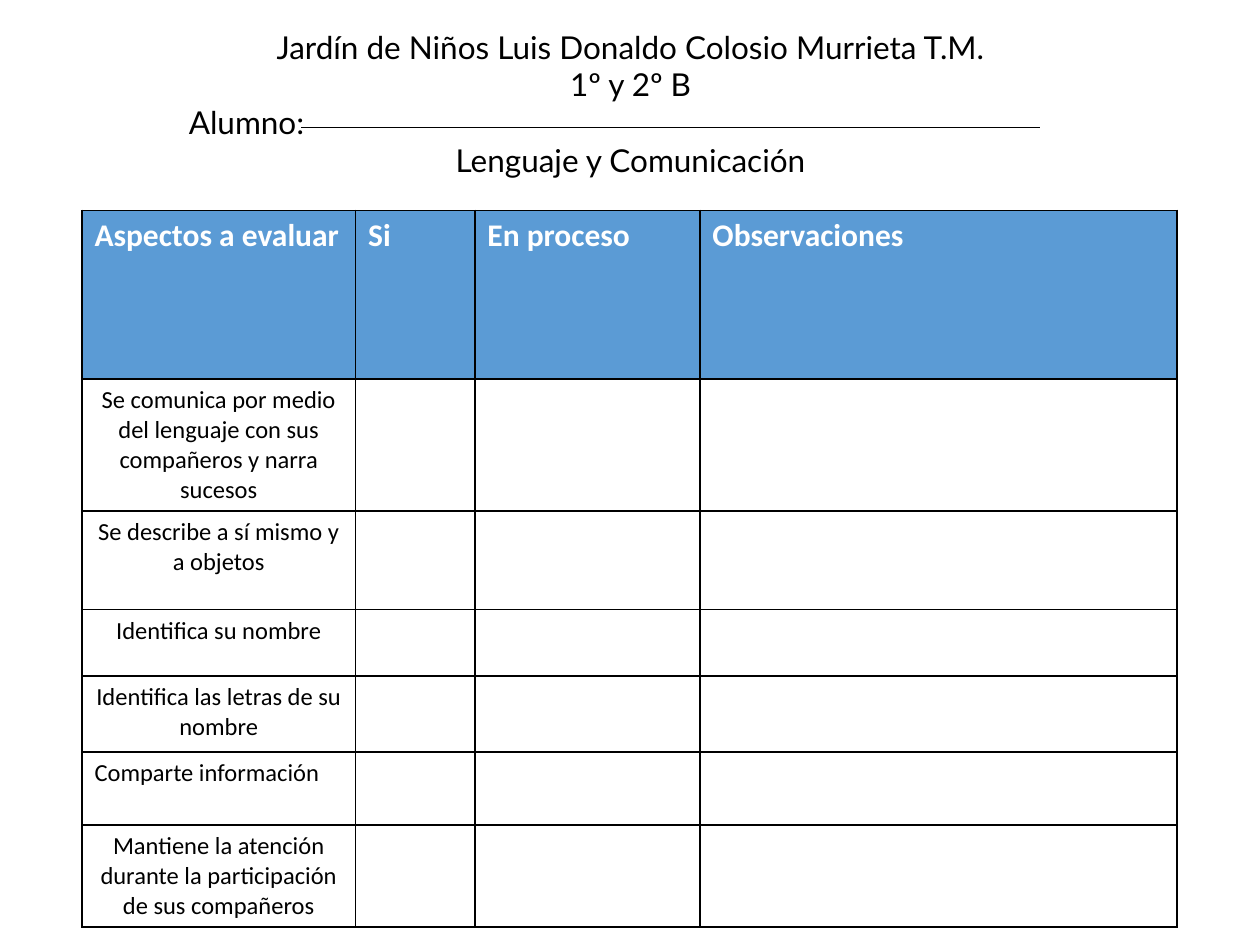
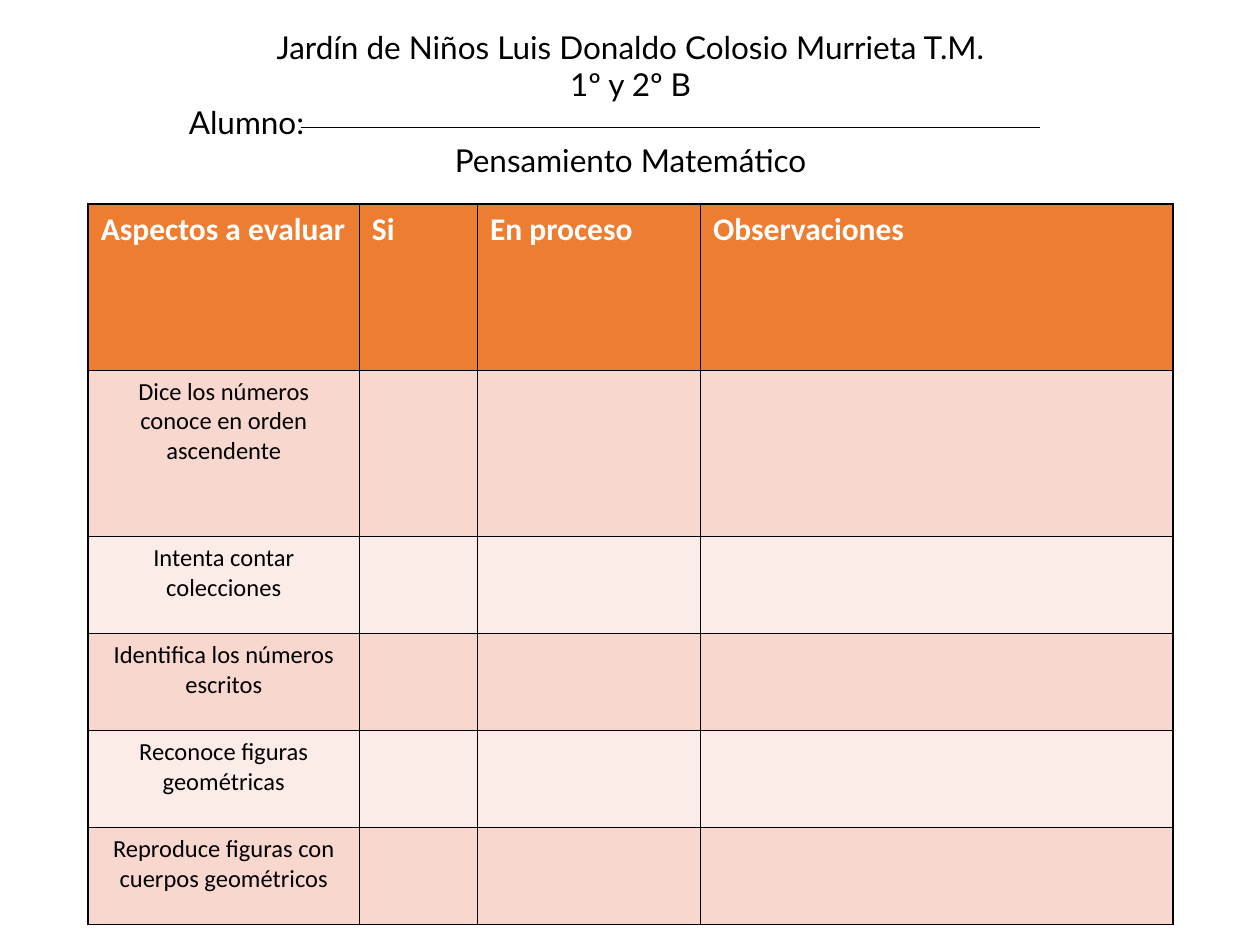
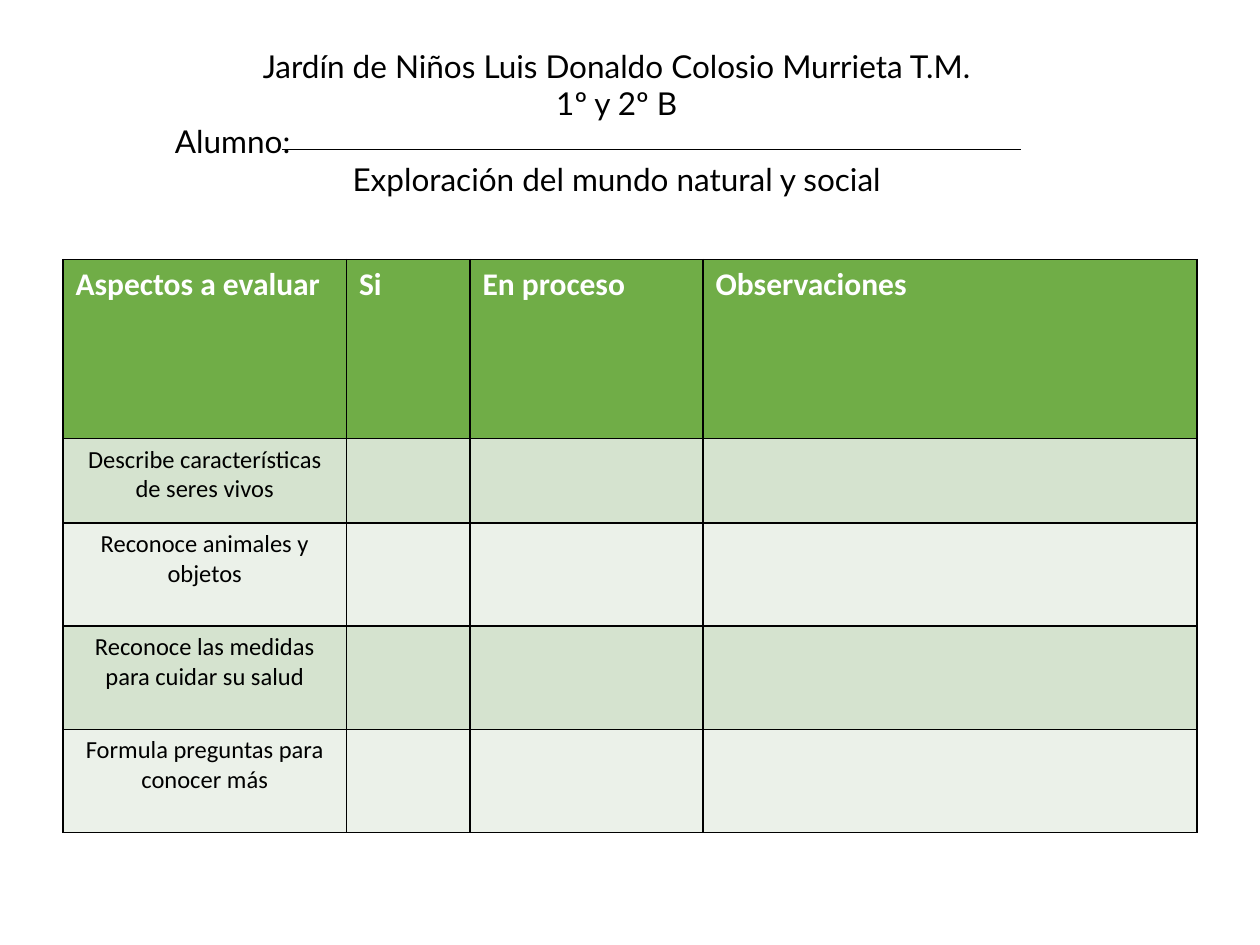
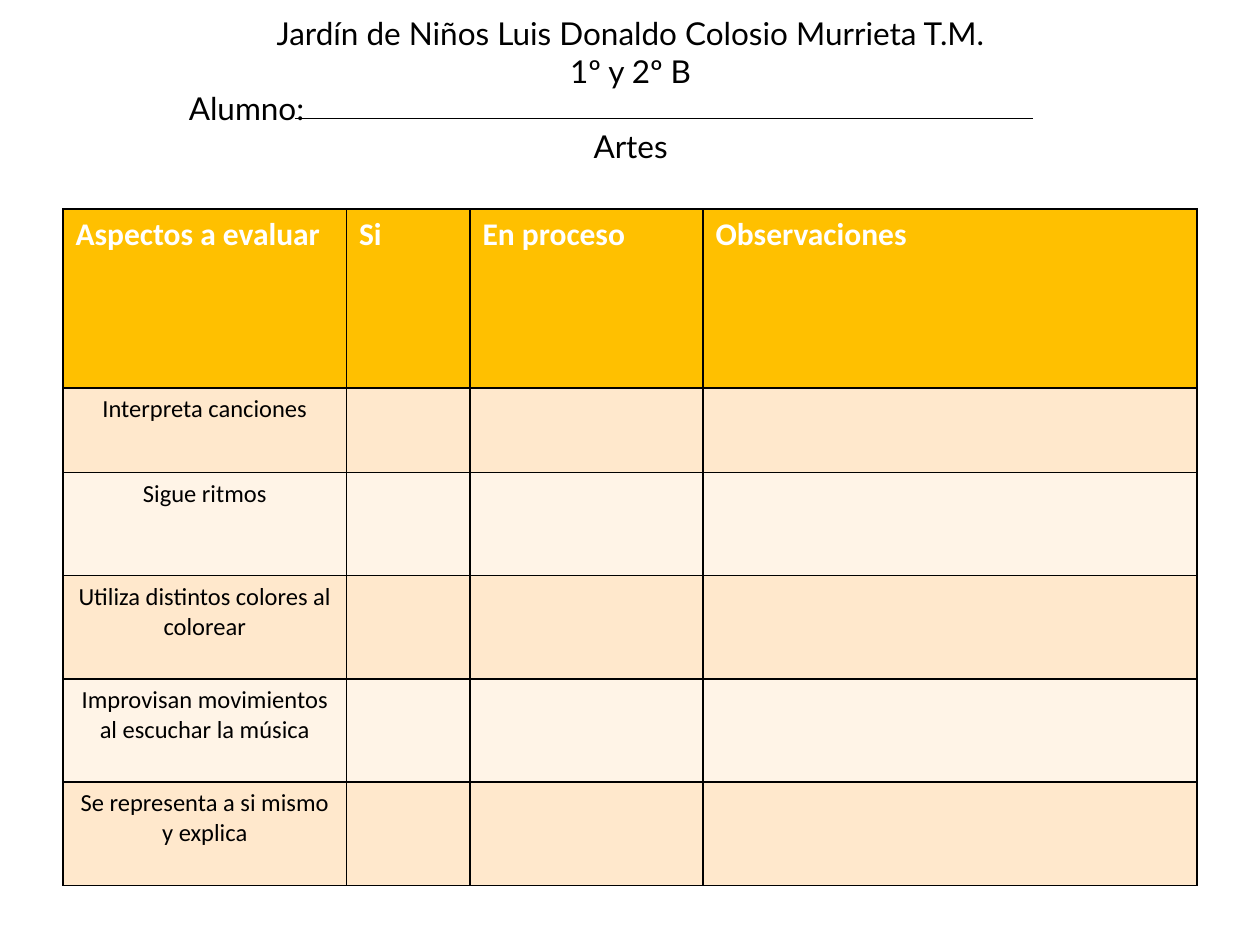
from dataclasses import dataclass

from lxml.etree import SubElement
from pptx import Presentation
from pptx.dml.color import RGBColor
from pptx.enum.shapes import MSO_CONNECTOR as Connector
from pptx.enum.text import MSO_AUTO_SIZE as AutoSize, PP_ALIGN as Align
from pptx.oxml.ns import qn
from pptx.util import Inches, Pt

# Content
SCHOOL = "Jardín de Niños Luis Donaldo Colosio Murrieta T.M."
GROUP = "1º y 2º B"
STUDENT = "Alumno:"
HEADINGS = ["Aspectos a evaluar", "Si", "En proceso", "Observaciones"]
LEFT_ALIGNED = {STUDENT, "Comparte información"}

# Places are (left, top) in inches; each aspect comes with its row height
FIELDS = [
    dict(
        name="Lenguaje y Comunicación",
        colors=("5B9BD5", None, None),
        heading_at=(1.4, 0.17), rule_at=(2.39, 1.01),
        table_at=(0.65, 1.67), table_width=8.69, head_height=1.34,
        aspects=[
            ("Se comunica por medio del lenguaje con sus compañeros y narra sucesos", 0.9),
            ("Se describe a sí mismo y a objetos", 0.78),
            ("Identifica su nombre", 0.53),
            ("Identifica las letras de su nombre", 0.6),
            ("Comparte información", 0.58),
            ("Mantiene la atención durante la participación de sus compañeros", 0.78),
        ],
    ),
    dict(
        name="Pensamiento Matemático",
        colors=("ED7D31", "F8D7CE", "FCECE8"),
        heading_at=(1.4, 0.17), rule_at=(2.39, 1.01),
        table_at=(0.7, 1.62), table_width=8.61, head_height=1.32,
        aspects=[
            ("Dice los números conoce en orden ascendente", 1.32),
            ("Intenta contar colecciones", 0.77),
            ("Identifica los números escritos", 0.77),
            ("Reconoce figuras geométricas", 0.77),
            ("Reproduce figuras con cuerpos geométricos", 0.77),
        ],
    ),
    dict(
        name="Exploración del mundo natural y social",
        colors=("70AD47", "D5E3CF", "EBF1E9"),
        heading_at=(1.29, 0.32), rule_at=(2.24, 1.19),
        table_at=(0.5, 2.06), table_width=9, head_height=1.42,
        aspects=[
            ("Describe características de seres vivos", 0.67),
            ("Reconoce animales y objetos", 0.82),
            ("Reconoce las medidas para cuidar su salud", 0.82),
            ("Formula preguntas para conocer más", 0.82),
        ],
    ),
    dict(
        name="Artes",
        colors=("FFC000", "FFE8CC", "FFF4E7"),
        heading_at=(1.4, 0.06), rule_at=(2.34, 0.94),
        table_at=(0.5, 1.66), table_width=9, head_height=1.42,
        aspects=[
            ("Interpreta canciones", 0.67),
            ("Sigue ritmos", 0.82),
            ("Utiliza distintos colores al colorear", 0.82),
            ("Improvisan movimientos al escuchar la música", 0.82),
            ("Se representa a si mismo y explica", 0.82),
        ],
    ),
]


# Shared look
@dataclass(frozen=True)
class Theme:
    ink: str = "000000"
    paper: str = "FFFFFF"
    heading_font: str = "Lato"
    table_font: str = "Calibri"
    large: int = 18
    small: int = 14
    border: float = 1
    rule: float = 0.5


THEME = Theme()
HEADING_SIZE = (7.21, 1.31)
RULE_LENGTH = 5.86
COLUMN_SHARES = (2.25, 0.98, 1.85, 3.92)

HEADING_STYLE = dict(name=THEME.heading_font, size=Pt(THEME.large), bold=False)
HEAD_STYLE = dict(name=THEME.table_font, size=Pt(THEME.large), bold=True)
ASPECT_STYLE = dict(name=THEME.table_font, size=Pt(THEME.small), bold=False)


def write(paragraph, words, style, color, align):
    paragraph.alignment = align
    run = paragraph.add_run()
    run.text = words
    for attribute, value in style.items():
        setattr(run.font, attribute, value)
    run.font.color.rgb = RGBColor.from_string(color)


def body_align(words):
    return Align.LEFT if words in LEFT_ALIGNED else Align.CENTER


def add_heading(slide, field):
    heading = slide.shapes.add_textbox(*map(Inches, field["heading_at"] + HEADING_SIZE))
    frame = heading.text_frame
    frame.word_wrap = True
    frame.auto_size = AutoSize.SHAPE_TO_FIT_TEXT
    for i, words in enumerate([SCHOOL, GROUP, STUDENT, field["name"]]):
        paragraph = frame.add_paragraph() if i else frame.paragraphs[0]
        write(paragraph, words, HEADING_STYLE, THEME.ink, body_align(words))


def add_name_rule(slide, field):
    left, top = field["rule_at"]
    rule = slide.shapes.add_connector(
        Connector.STRAIGHT, *map(Inches, (left, top, left + RULE_LENGTH, top)))
    rule.line.color.rgb = RGBColor.from_string(THEME.ink)
    rule.line.width = Pt(THEME.rule)
    SubElement(rule.element.spPr, qn("a:effectLst"))


def dress(cell, color):
    # Borders go before the fill in the cell properties
    properties = cell._tc.get_or_add_tcPr()
    for side in ("a:lnL", "a:lnR", "a:lnT", "a:lnB"):
        edge = SubElement(properties, qn(side), w=str(Pt(THEME.border)))
        SubElement(SubElement(edge, qn("a:solidFill")), qn("a:srgbClr"), val=THEME.ink)
    if color:
        cell.fill.solid()
        cell.fill.fore_color.rgb = RGBColor.from_string(color)
    else:
        cell.fill.background()


def add_checklist(slide, field):
    head_color, *bands = field["colors"]
    aspects, width = field["aspects"], field["table_width"]
    heights = [field["head_height"]] + [height for _, height in aspects]
    table = slide.shapes.add_table(
        len(heights), len(HEADINGS),
        *map(Inches, (*field["table_at"], width, sum(heights)))).table

    # Grid
    for column, share in zip(table.columns, COLUMN_SHARES):
        column.width = Inches(width * share / sum(COLUMN_SHARES))
    for i, (row, height) in enumerate(zip(table.rows, heights)):
        row.height = Inches(height)
        for cell in row.cells:
            dress(cell, bands[(i - 1) % 2] if i else head_color)

    # Words
    for cell, words in zip(table.rows[0].cells, HEADINGS):
        write(cell.text_frame.paragraphs[0], words, HEAD_STYLE, THEME.paper, Align.LEFT)
    for i, (words, _) in enumerate(aspects, start=1):
        write(table.cell(i, 0).text_frame.paragraphs[0], words,
              ASPECT_STYLE, THEME.ink, body_align(words))


def main():
    deck = Presentation()
    deck.slide_width, deck.slide_height = Inches(10), Inches(7.5)
    blank = deck.slide_layouts[6]
    for field in FIELDS:
        slide = deck.slides.add_slide(blank)
        add_checklist(slide, field)
        add_heading(slide, field)
        add_name_rule(slide, field)
    deck.save("out.pptx")


if __name__ == "__main__":
    main()
